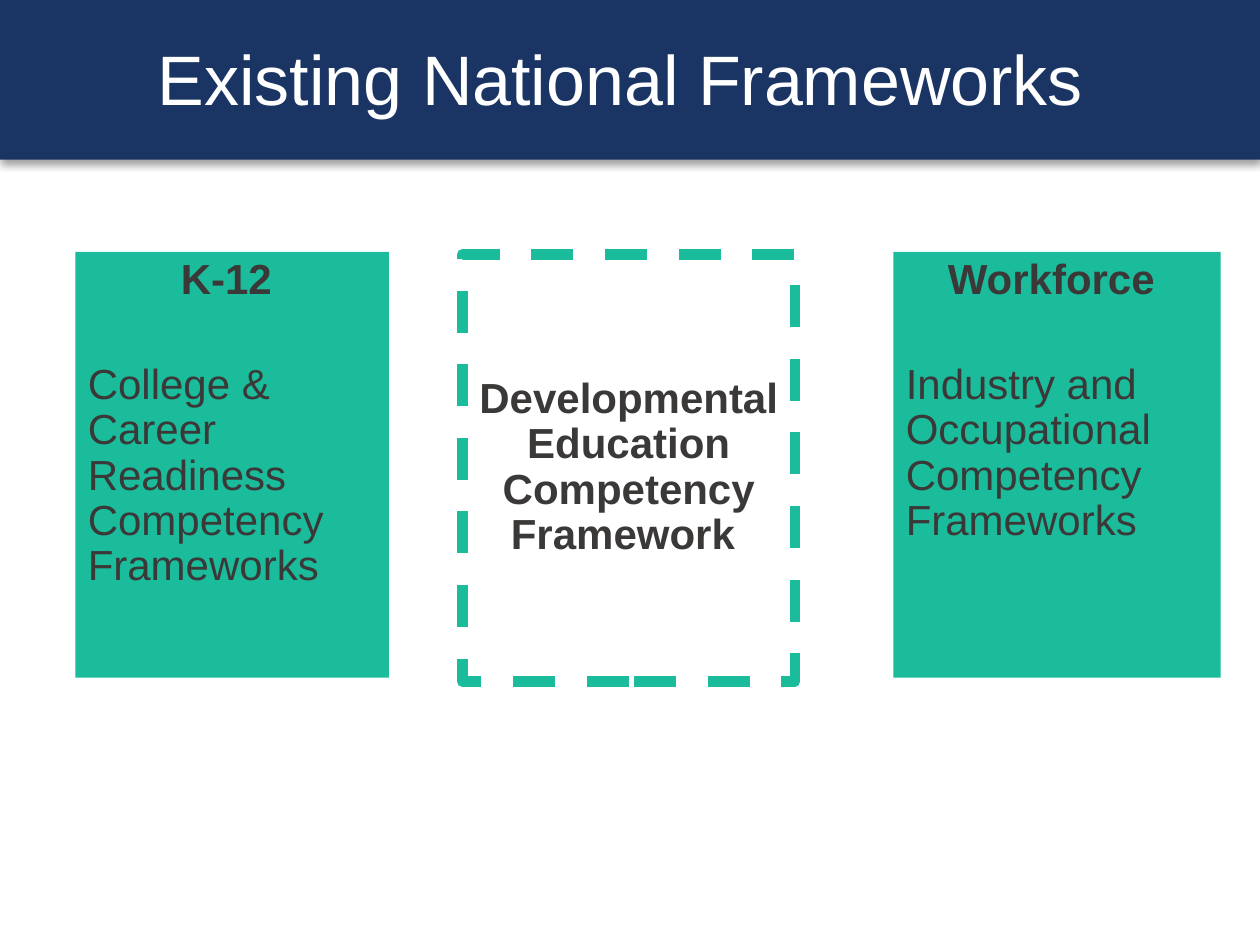
from lxml import etree
from pptx import Presentation
from pptx.dml.color import RGBColor
from pptx.enum.dml import MSO_LINE
from pptx.enum.shapes import MSO_SHAPE
from pptx.enum.text import MSO_ANCHOR, MSO_AUTO_SIZE, PP_ALIGN
from pptx.oxml.ns import qn
from pptx.util import Cm, Pt

RECT = MSO_SHAPE.RECTANGLE
DASH = MSO_LINE.DASH
TOP, MIDDLE = MSO_ANCHOR.TOP, MSO_ANCHOR.MIDDLE
LEFT, CENTER = PP_ALIGN.LEFT, PP_ALIGN.CENTER
NO_FIT = MSO_AUTO_SIZE.NONE

FONT = "Arial"
COLORS = {"navy": "1A3564", "teal": "1BBC9C", "ink": "3B3838",
          "white": "FFFFFF", "shade": "000000"}


def rgb(name):
    return RGBColor.from_string(COLORS[name])


def add_run(para, text, size, color, bold=False):
    run = para.add_run()
    run.text = text
    font = run.font
    font.name = FONT
    font.size = Pt(size)
    font.bold = bold
    font.color.rgb = rgb(color)


def add_shade(shape):
    effects = etree.SubElement(shape.element.spPr, qn("a:effectLst"))
    shade = etree.SubElement(effects, qn("a:outerShdw"), blurRad=str(Pt(5)),
                             dist=str(Pt(2)), dir="5400000", rotWithShape="0")
    color = etree.SubElement(shade, qn("a:srgbClr"), val=COLORS["shade"])
    etree.SubElement(color, qn("a:alpha"), val="40000")


def set_title(slide, text):
    title = slide.shapes.title
    title.left, title.top = Cm(0), Cm(-0.08)
    title.width, title.height = Cm(25.4), Cm(3.3)
    title.fill.solid()
    title.fill.fore_color.rgb = rgb("navy")
    add_shade(title)
    frame = title.text_frame
    frame.auto_size = NO_FIT
    frame.vertical_anchor = MIDDLE
    para = frame.paragraphs[0]
    para.alignment = CENTER
    add_run(para, text, 40, "white")


def add_card(slide, left, top, width, height, head, body=None):
    card = slide.shapes.add_shape(RECT, Cm(left), Cm(top), Cm(width), Cm(height))
    card.shadow.inherit = False
    if body:
        card.fill.solid()
        card.fill.fore_color.rgb = rgb("teal")
        card.line.fill.background()
    else:
        card.fill.background()
        card.line.color.rgb = rgb("teal")
        card.line.width = Pt(6)
        card.line.dash_style = DASH
    frame = card.text_frame
    frame.word_wrap = True
    frame.vertical_anchor = TOP if body else MIDDLE
    para = frame.paragraphs[0]
    style_para(para, CENTER)
    add_run(para, head, 24, "ink", True)
    if body:
        para = frame.add_paragraph()
        style_para(para, LEFT)
        para.space_before = Pt(10)
        add_run(para, body, 24, "ink")


def style_para(para, align):
    para.alignment = align
    para.line_spacing = 0.9
    para.space_after = Pt(24)


def main():
    deck = Presentation()
    deck.slide_width, deck.slide_height = Cm(25.4), Cm(19.05)
    slide = deck.slides.add_slide(deck.slide_layouts[5])
    set_title(slide, "Existing National Frameworks ")
    add_card(slide, 9.32, 5.13, 6.71, 8.61,
             "Developmental Education Competency Framework ")
    add_card(slide, 1.52, 5.08, 6.32, 8.58, "K-12 ",
             "College & Career Readiness Competency Frameworks")
    add_card(slide, 18.01, 5.08, 6.6, 8.58, "Workforce ",
             "Industry and Occupational Competency Frameworks")
    deck.save("out.pptx")


if __name__ == "__main__":
    main()
